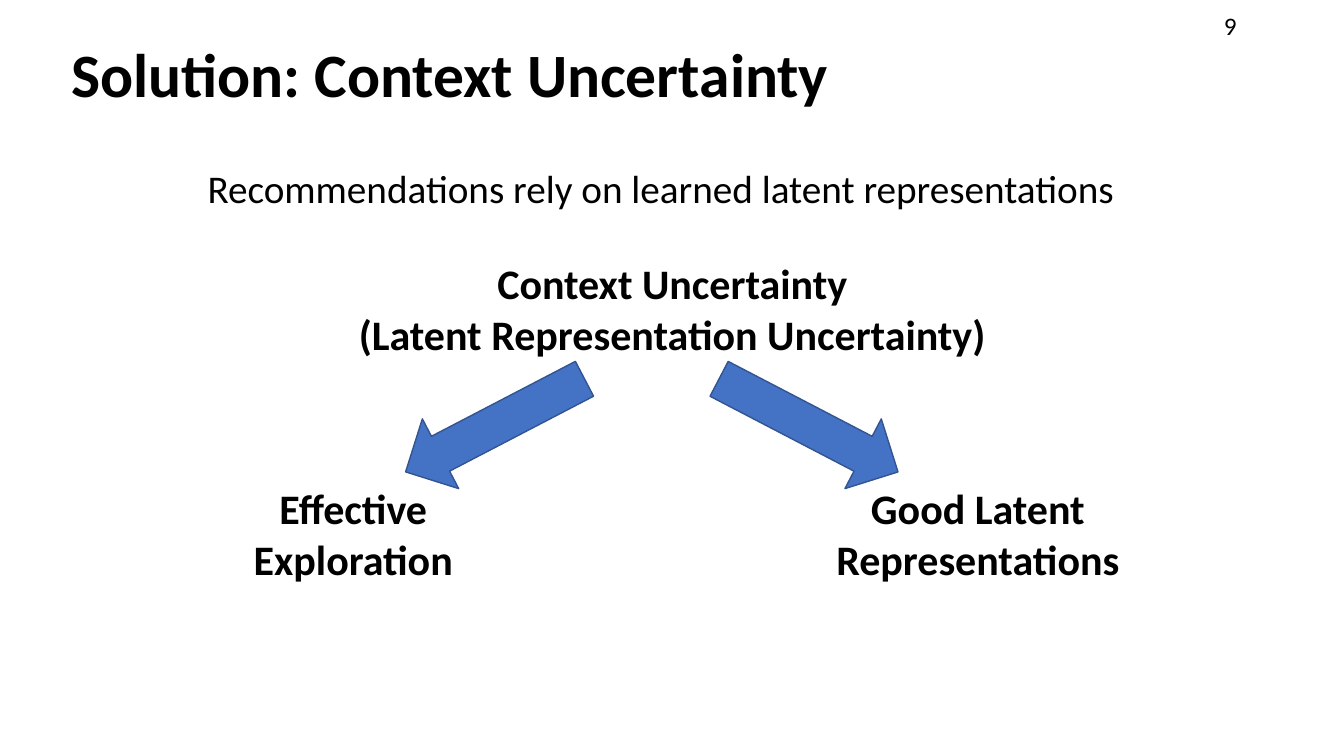
"""Builds the slide on context uncertainty: one idea leading to two benefits."""
from dataclasses import dataclass
from typing import NamedTuple

from pptx import Presentation
from pptx.dml.color import RGBColor
from pptx.enum.shapes import MSO_SHAPE as Shape
from pptx.enum.text import MSO_ANCHOR as Anchor, PP_ALIGN as Align
from pptx.slide import Slide
from pptx.util import Emu, Pt

EMU_PER_PX = 9144


@dataclass(frozen=True)
class Theme:
    font: str = "Calibri"
    ink: RGBColor = RGBColor(0x00, 0x00, 0x00)
    arrow_fill: RGBColor = RGBColor(0x44, 0x72, 0xC4)
    arrow_line: RGBColor = RGBColor(0x32, 0x54, 0x91)
    title_size: int = 44
    concept_size: int = 30
    premise_size: int = 28
    number_size: int = 18


class Area(NamedTuple):
    left: int
    top: int
    width: int
    height: int


class Concept(NamedTuple):
    area: Area
    lines: tuple[str, ...]


class Arrow(NamedTuple):
    area: Area
    rotation: float


THEME = Theme()

CONCEPTS = (
    Concept(Area(327, 251, 680, 111),
            ("Context Uncertainty", "(Latent Representation Uncertainty)")),
    Concept(Area(234, 474, 233, 111), ("Effective", "Exploration")),
    Concept(Area(811, 474, 318, 111), ("Good Latent", "Representations")),
)

ARROWS = (
    Arrow(Area(452, 322, 78, 200), 62.5),
    Arrow(Area(763, 322, 78, 200), 297.5),
)


def px(length: int) -> Emu:
    return Emu(length * EMU_PER_PX)


def place(area: Area) -> tuple[Emu, ...]:
    return tuple(px(length) for length in area)


def add_text(page: Slide, area: Area, *lines: str, size: int,
             bold: bool = False, wrap: bool = False,
             align: Align = Align.LEFT, anchor: Anchor = Anchor.TOP,
             line_spacing: float = 1.0) -> None:
    frame = page.shapes.add_textbox(*place(area)).text_frame
    frame.word_wrap = wrap
    frame.vertical_anchor = anchor
    for index, line in enumerate(lines):
        para = frame.add_paragraph() if index else frame.paragraphs[0]
        para.alignment = align
        para.line_spacing = line_spacing
        span = para.add_run()
        span.text = line
        span.font.name = THEME.font
        span.font.size = Pt(size)
        span.font.bold = bold
        span.font.color.rgb = THEME.ink


def add_arrow(page: Slide, arrow: Arrow) -> None:
    shape = page.shapes.add_shape(Shape.DOWN_ARROW, *place(arrow.area))
    shape.rotation = arrow.rotation
    shape.shadow.inherit = False
    shape.fill.solid()
    shape.fill.fore_color.rgb = THEME.arrow_fill
    shape.line.color.rgb = THEME.arrow_line
    shape.line.width = Pt(1)


def main() -> None:
    deck = Presentation()
    deck.slide_width, deck.slide_height = px(1333), px(750)
    page = deck.slides.add_slide(deck.slide_layouts[6])

    add_text(page, Area(61, 23, 900, 108), "Solution: Context Uncertainty",
             size=THEME.title_size, bold=True, wrap=True,
             anchor=Anchor.MIDDLE, line_spacing=0.9)
    add_text(page, Area(196, 158, 941, 57),
             "Recommendations rely on learned latent representations",
             size=THEME.premise_size)
    for concept in CONCEPTS:
        add_text(page, concept.area, *concept.lines,
                 size=THEME.concept_size, bold=True, align=Align.CENTER)
    for arrow in ARROWS:
        add_arrow(page, arrow)
    add_text(page, Area(1204, 5, 117, 36), "9",
             size=THEME.number_size, wrap=True)

    deck.save("out.pptx")


if __name__ == "__main__":
    main()
